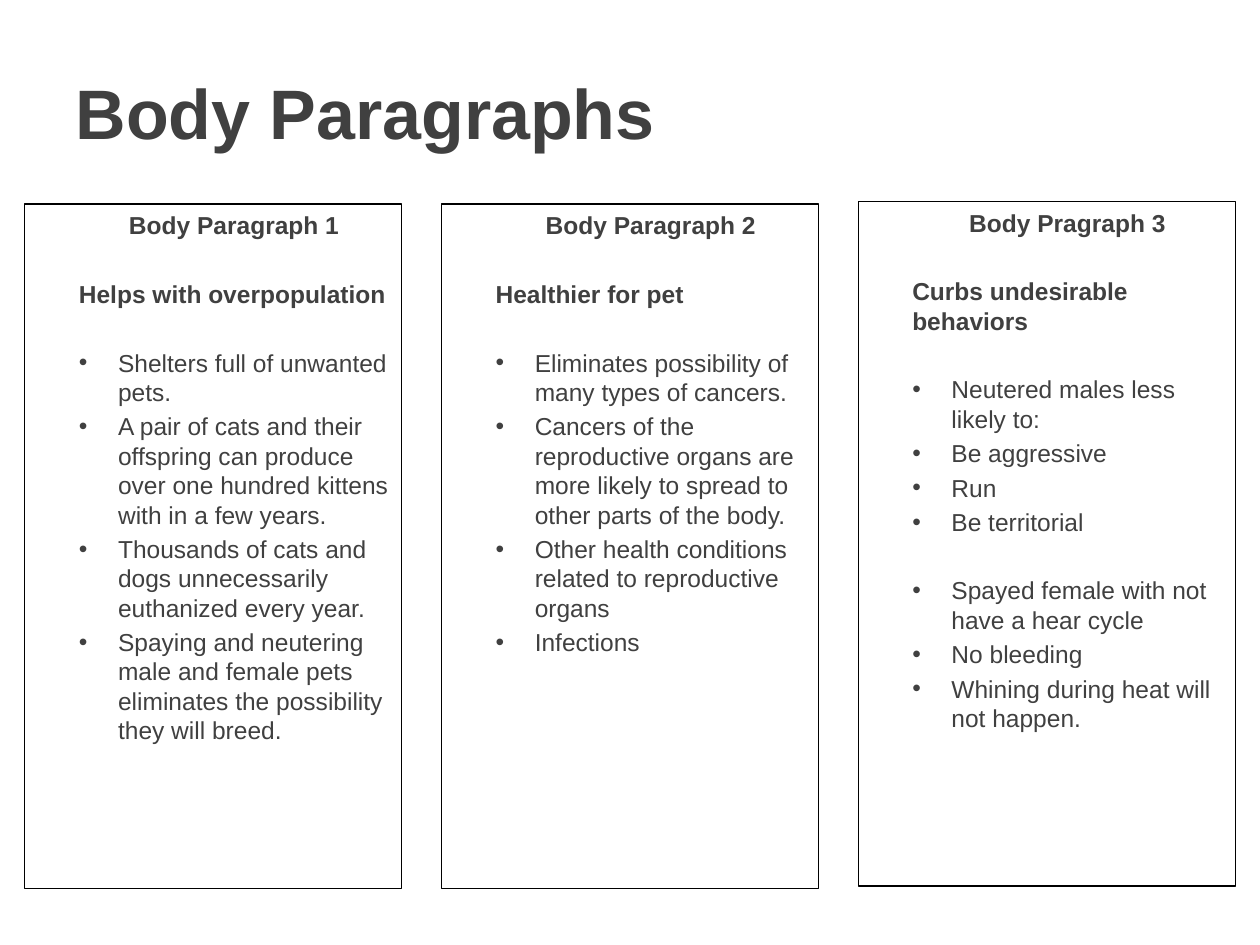
from pptx import Presentation
from pptx.dml.color import RGBColor
from pptx.enum.text import MSO_ANCHOR as Anchor, MSO_AUTO_SIZE as Fit, PP_ALIGN as Align
from pptx.util import Cm, Pt
from lxml.etree import SubElement
from pptx.oxml.ns import qn

# Content: heading, topic, groups of bullets
TITLE = "Body Paragraphs"
COLUMNS = [
    ("Body Paragraph 1", "Helps with overpopulation", [[
        "Shelters full of unwanted pets.",
        "A pair of cats and their offspring can produce over one hundred "
        "kittens with in a few years.",
        "Thousands of cats and dogs unnecessarily euthanized every year.",
        "Spaying and neutering male and female pets eliminates the "
        "possibility they will breed.",
    ]]),
    ("Body Paragraph 2", "Healthier for pet", [[
        "Eliminates possibility of many types of cancers.",
        "Cancers of the reproductive organs are more likely to spread to "
        "other parts of the body.",
        "Other health conditions related to reproductive organs",
        "Infections",
    ]]),
    ("Body Pragraph 3", "Curbs undesirable behaviors", [
        ["Neutered males less likely to:", "Be aggressive", "Run",
         "Be territorial"],
        ["Spayed female with not have a hear cycle", "No bleeding",
         "Whining during heat will not happen."],
    ]),
]

# Style
INK = RGBColor(0x40, 0x40, 0x40)
BLACK = RGBColor(0, 0, 0)
FONT = "Arial"
NEAR, FAR = Pt(2.8), Pt(22.4)  # space before a line, before a group

# Column grid
LEFT, STEP, WIDTH, HEIGHT = 0.5, 8.4, 7.6, 13.8
TOPS = [4.11, 4.11, 4.06]


def place(shape, left, top, width, height):
    shape.left, shape.top = Cm(left), Cm(top)
    shape.width, shape.height = Cm(width), Cm(height)


def style(para, size, bold):
    font = para.font
    font.name, font.size, font.bold = FONT, Pt(size), bold
    font.color.rgb = INK


def add_line(frame, text, gap, bold=False, align=Align.LEFT, bullet=False):
    first = not frame.text
    para = frame.paragraphs[0] if first else frame.add_paragraph()
    para.text = text
    para.alignment = align
    para.space_before = gap
    props = para._p.get_or_add_pPr()
    indent = Cm(0.79) if bullet else 0
    props.set("marL", str(indent))
    props.set("indent", str(-indent))
    if bullet:
        SubElement(props, qn("a:buFont"), typeface=FONT)
        SubElement(props, qn("a:buChar"), char="•")
    else:
        SubElement(props, qn("a:buNone"))
    style(para, 14, bold)


def fill_column(shape, head, topic, groups):
    shape.line.color.rgb = BLACK
    shape.line.width = Pt(0.75)
    frame = shape.text_frame
    frame.word_wrap = True
    frame.auto_size = Fit.NONE
    frame.vertical_anchor = Anchor.TOP
    frame.margin_left, frame.margin_right = Cm(1.09), Cm(0.25)
    frame.margin_top = frame.margin_bottom = Cm(0.13)
    add_line(frame, head, Pt(0), bold=True, align=Align.CENTER)
    add_line(frame, topic, FAR, bold=True)
    for group in groups:
        for i, text in enumerate(group):
            add_line(frame, text, NEAR if i else FAR, bullet=True)


deck = Presentation()
deck.slide_width, deck.slide_height = Cm(25.4), Cm(19.05)
# The Comparison layout has a title and four bodies
slide = deck.slides.add_slide(deck.slide_layouts[4])

# Title
title = slide.shapes.title
place(title, 1.27, 0.76, 22.86, 2.97)
title.text_frame.text = TITLE
title.text_frame.auto_size = Fit.NONE
title.text_frame.vertical_anchor = Anchor.MIDDLE
para = title.text_frame.paragraphs[0]
para.alignment = Align.LEFT
style(para, 40, True)

# Columns
bodies = [p for p in slide.placeholders if 1 <= p.placeholder_format.idx <= 4]
for i, (body, top, column) in enumerate(zip(bodies, TOPS, COLUMNS)):
    place(body, LEFT + i * STEP, top, WIDTH, HEIGHT)
    fill_column(body, *column)

# Unused placeholders
for spare in bodies[len(COLUMNS):]:
    spare.element.getparent().remove(spare.element)

deck.save("out.pptx")
